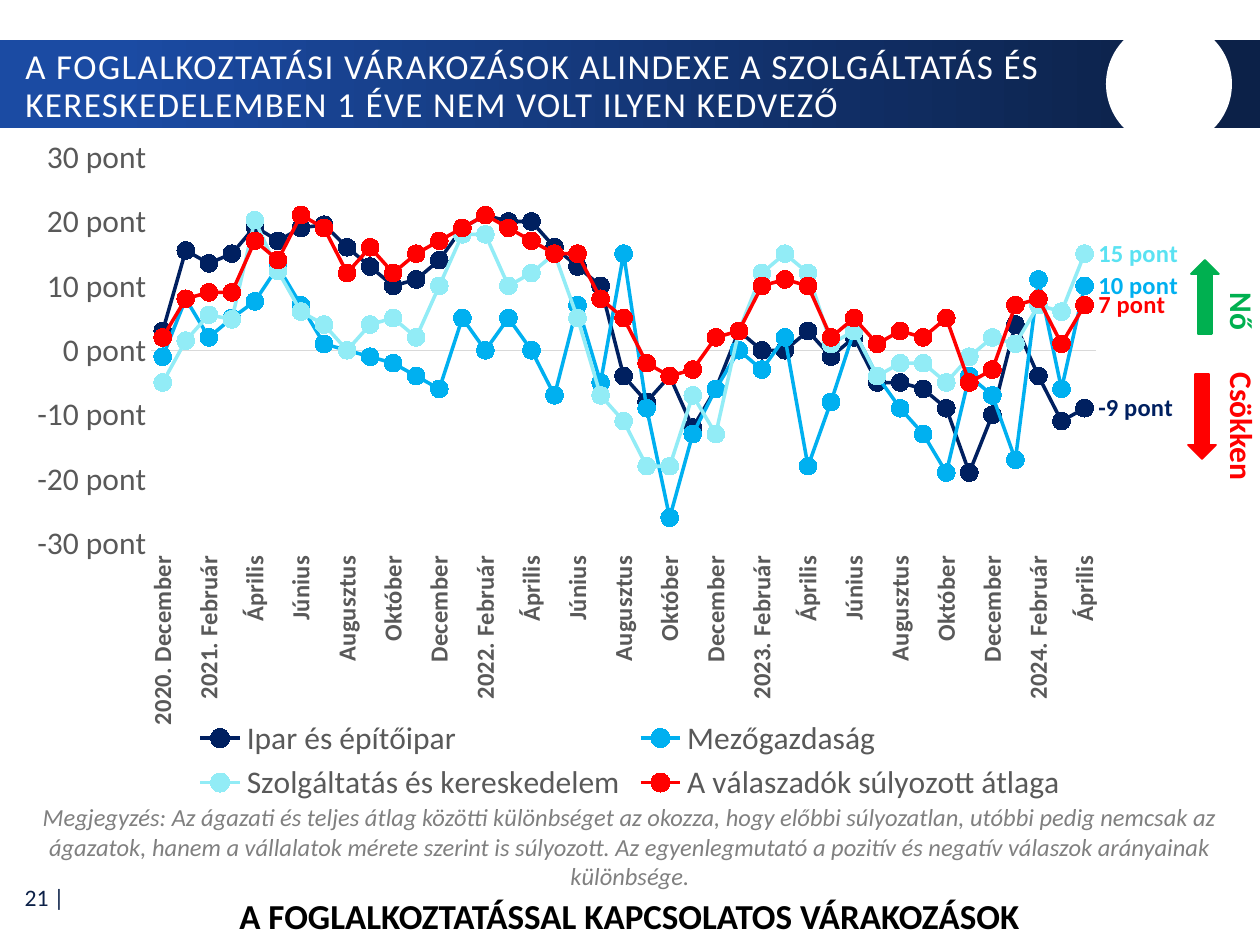
from lxml import etree
from pptx import Presentation
from pptx import util as u
from pptx.chart.data import CategoryChartData
from pptx.dml.color import RGBColor
from pptx.enum import chart as ch, shapes, text
from pptx.oxml import parse_xml
from pptx.oxml.ns import nsdecls, qn

NAVY = RGBColor(0x0C, 0x21, 0x48)
BLUE = RGBColor(0x1B, 0x4B, 0xA3)
WHITE = RGBColor(0xFF, 0xFF, 0xFF)
BLACK = RGBColor(0, 0, 0)
GREEN = RGBColor(0x00, 0xB0, 0x50)
RED = RGBColor(0xFF, 0, 0)
NOTE_GREY = RGBColor(0x80, 0x80, 0x80)
AXIS_TEXT = RGBColor(0x59, 0x59, 0x59)
AXIS_LINE = RGBColor(0xD9, 0xD9, 0xD9)
INDUSTRY = RGBColor(0x00, 0x20, 0x60)
FARMING = RGBColor(0x00, 0xB0, 0xF0)
SERVICES = RGBColor(0x92, 0xEC, 0xF6)
SERVICES_LABEL = RGBColor(0x5A, 0xE2, 0xF2)

FONT = "Calibri"
POINT_FORMAT = '0\\ "pont"'
MONTHS = ["Április", "Június", "Augusztus", "Október", "December"]
LABELS = ["2020. December", "2021. Február", *MONTHS, "2022. Február", *MONTHS,
          "2023. Február", *MONTHS, "2024. Február", "Április"]

# name, line colour, label colour, monthly values
SECTORS = [
    ("Ipar és építőipar", INDUSTRY, INDUSTRY,
     [3, 15.5, 13.5, 15, 19.2, 17, 19, 19.5, 16, 13, 10, 11, 14, 19, 21, 20, 20, 16, 13, 10, -4,
      -8, -4, -12, -6, 3, 0, 0, 3, -1, 2, -5, -5, -6, -9, -19, -10, 4, -4, -11, -9]),
    ("Mezőgazdaság", FARMING, FARMING,
     [-1, 8, 2, 5, 7.6, 13, 7, 1, 0, -1, -2, -4, -6, 5, 0, 5, 0, -7, 7, -5, 15,
      -9, -26, -13, -6, 0, -3, 2, -18, -8, 3, -4, -9, -13, -19, -4, -7, -17, 11, -6, 10]),
    ("Szolgáltatás és kereskedelem", SERVICES, SERVICES_LABEL,
     [-5, 1.5, 5.5, 4.8, 20.2, 12.3, 6, 4, 0, 4, 5, 2, 10, 18, 18, 10, 12, 15, 5, -7, -11,
      -18, -18, -7, -13, 3, 12, 15, 12, 1, 3, -4, -2, -2, -5, -1, 2, 1, 7, 6, 15]),
    ("A válaszadók súlyozott átlaga", RED, RED,
     [2, 8, 9, 9, 17, 14, 21, 19, 12, 16, 12, 15, 17, 19, 21, 19, 17, 15, 15, 8, 5,
      -2, -4, -3, 2, 3, 10, 11, 10, 2, 5, 1, 3, 2, 5, -5, -3, 7, 8, 1, 7]),
]


def px(n):
    return u.Emu(round(n * 914400 / 126))


def place(box):
    return [px(n) for n in box]


def style(font, size, color, bold=False, italic=False):
    font.name, font.size, font.bold, font.italic = FONT, u.Pt(size), bold, italic
    font.color.rgb = color


def add_text(slide, box, runs, size, align=text.PP_ALIGN.LEFT,
             anchor=text.MSO_ANCHOR.TOP, **emphasis):
    """Places one paragraph of (wording, colour) runs and returns its frame."""
    frame = slide.shapes.add_textbox(*place(box)).text_frame
    frame.word_wrap = True
    frame.vertical_anchor = anchor
    paragraph = frame.paragraphs[0]
    paragraph.alignment = align
    for wording, color in runs:
        run = paragraph.add_run()
        run.text = wording
        style(run.font, size, color, **emphasis)
    return frame


def add_plain_shape(slide, kind, box, color):
    shape = slide.shapes.add_shape(kind, *place(box))
    shape.shadow.inherit = False
    shape.fill.solid()
    shape.fill.fore_color.rgb = color
    shape.line.fill.background()
    return shape


def title_band(slide, box):
    left, top, width, height = box
    band = add_plain_shape(slide, shapes.MSO_SHAPE.RECTANGLE, box, NAVY)
    band.fill.gradient()
    band.fill.gradient_angle = 0
    for stop, position, color in zip(band.fill.gradient_stops, (0.09, 0.95), (BLUE, NAVY)):
        stop.position = position
        stop.color.rgb = color
    add_plain_shape(slide, shapes.MSO_SHAPE.OVAL, (left + 1106, top - 19, 126, 126), WHITE)
    title = add_text(
        slide, (left + 13, top + 5, 1084, height - 4),
        [("A FOGLALKOZTATÁSI VÁRAKOZÁSOK ALINDEXE A SZOLGÁLTATÁS ÉS "
          "KERESKEDELEMBEN 1 ÉVE NEM VOLT ILYEN KEDVEZŐ", WHITE)],
        20, anchor=text.MSO_ANCHOR.MIDDLE).paragraphs[0]
    title.line_spacing = 0.9
    title.runs[0].font._element.set("spc", "80")


def direction_key(slide, box):
    left, top, width, height = box
    # Arrows: rising and falling
    for x, y, arrow_height, color, turn in ((3, 0, 74, GREEN, 0), (0, 114, 85, RED, 180)):
        arrow = add_plain_shape(slide, shapes.MSO_SHAPE.UP_ARROW,
                                (left + x, top + y, 28, arrow_height), color)
        arrow.rotation = turn
        arrow.line.color.rgb = color
        arrow.line.width = u.Pt(1)
    # Vertical caption, second word held by a tab stop
    caption = add_text(slide, (left + 17, top + 20, 63, height - 20),
                       [("Nő\t", GREEN), ("Csökken", RED)], 18, bold=True)
    caption._txBody.bodyPr.set("vert", "vert")
    tabs = etree.SubElement(caption.paragraphs[0]._p.get_or_add_pPr(), qn("a:tabLst"))
    etree.SubElement(tabs, qn("a:tab"), pos=str(px(80)), algn="l")


def style_series(series, color, label_color):
    series.smooth = False
    series.format.line.color.rgb = color
    series.format.line.width = u.Pt(2)
    series.marker.style = ch.XL_MARKER_STYLE.CIRCLE
    series.marker.size = 10
    series.marker.format.fill.solid()
    series.marker.format.fill.fore_color.rgb = color
    series.marker.format.line.color.rgb = color
    # Only the latest month carries its value
    series.data_labels.show_value = False
    last = len(series.values) - 1
    label = series.points[last].data_label
    style(label.font, 14, label_color, bold=True)
    label.position = ch.XL_LABEL_POSITION.RIGHT
    number_format = parse_xml(f'<c:numFmt {nsdecls("c")} sourceLinked="0"/>')
    number_format.set("formatCode", POINT_FORMAT)
    series._element.find(".//" + qn("c:dLbl")).find(qn("c:idx")).addnext(number_format)


def expectations_chart(slide, box):
    data = CategoryChartData(number_format="General")
    data.categories = [LABELS[i // 2] if i % 2 == 0 else ""
                       for i in range(2 * len(LABELS) - 1)]
    for name, _, _, values in SECTORS:
        data.add_series(name, values)
    chart = slide.shapes.add_chart(ch.XL_CHART_TYPE.LINE_MARKERS, *place(box), data).chart
    chart.has_title = False
    style(chart.font, 18, BLACK)
    chart.plots[0].vary_by_categories = False
    for series, (_, color, label_color, _) in zip(chart.plots[0].series, SECTORS):
        style_series(series, color, label_color)

    # Axes
    months, points = chart.category_axis, chart.value_axis
    for axis in (months, points):
        axis.has_major_gridlines = False
        axis.major_tick_mark = axis.minor_tick_mark = ch.XL_TICK_MARK.NONE
    months.tick_label_position = ch.XL_TICK_LABEL_POSITION.LOW
    style(months.tick_labels.font, 14, AXIS_TEXT, bold=True)
    months._element.find(qn("c:txPr")).find(qn("a:bodyPr")).set("rot", "-5400000")
    months.format.line.color.rgb = AXIS_LINE
    months.format.line.width = u.Pt(0.75)
    points.minimum_scale, points.maximum_scale, points.major_unit = -30, 30, 10
    points.tick_labels.number_format = POINT_FORMAT
    points.tick_labels.number_format_is_linked = False
    style(points.tick_labels.font, 18, AXIS_TEXT)
    points.format.line.fill.background()

    # Legend and inner plot area
    chart.has_legend = True
    chart.legend.position = ch.XL_LEGEND_POSITION.BOTTOM
    chart.legend.include_in_layout = False
    style(chart.legend.font, 18, AXIS_TEXT)
    plot_area = chart._chartSpace.chart.plotArea
    for old in plot_area.findall(qn("c:layout")):
        plot_area.remove(old)
    settings = dict(layoutTarget="inner", xMode="edge", yMode="edge",
                    x=0.12, y=0.04, w=0.75, h=0.57)
    parts = "".join(f'<c:{key} val="{value}"/>' for key, value in settings.items())
    plot_area.insert(0, parse_xml(
        f'<c:layout {nsdecls("c")}><c:manualLayout>{parts}</c:manualLayout></c:layout>'))


def footer(slide, box):
    left, top, width, height = box
    add_text(slide, (left + 1, top + 78, 76, 47), [("21 |", NAVY)], 13.5,
             text.PP_ALIGN.RIGHT, text.MSO_ANCHOR.MIDDLE)
    add_text(slide, (left + 107, top + 92, 1045, 55),
             [("A FOGLALKOZTATÁSSAL KAPCSOLATOS VÁRAKOZÁSOK", BLACK)], 20,
             text.PP_ALIGN.CENTER, bold=True)
    add_text(slide, (left, top, width, 102),
             [("Megjegyzés: Az ágazati és teljes átlag közötti különbséget az okozza, hogy "
               "előbbi súlyozatlan, utóbbi pedig nemcsak az ágazatok, hanem a vállalatok "
               "mérete szerint is súlyozott. Az egyenlegmutató a pozitív és negatív válaszok "
               "arányainak különbsége.", NOTE_GREY)], 14, text.PP_ALIGN.CENTER, italic=True)


def main():
    deck = Presentation()
    deck.slide_width, deck.slide_height = px(1260), px(945)
    slide = deck.slides.add_slide(deck.slide_layouts[6])
    title_band(slide, (0, 40, 1260, 88))
    footer(slide, (0, 796, 1260, 149))
    direction_key(slide, (1188, 260, 80, 239))
    expectations_chart(slide, (0, 130, 1260, 678))
    deck.save("out.pptx")


if __name__ == "__main__":
    main()
